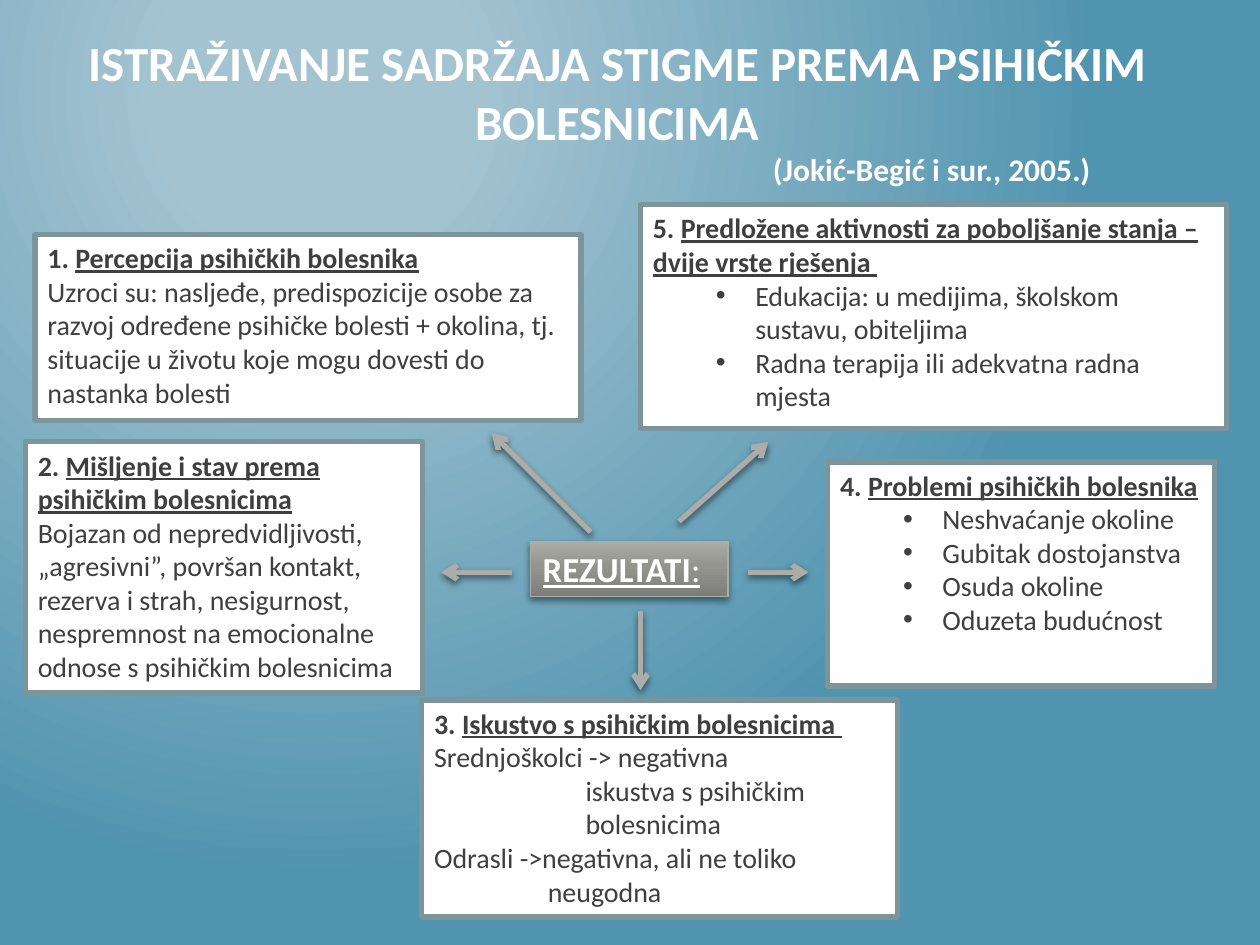
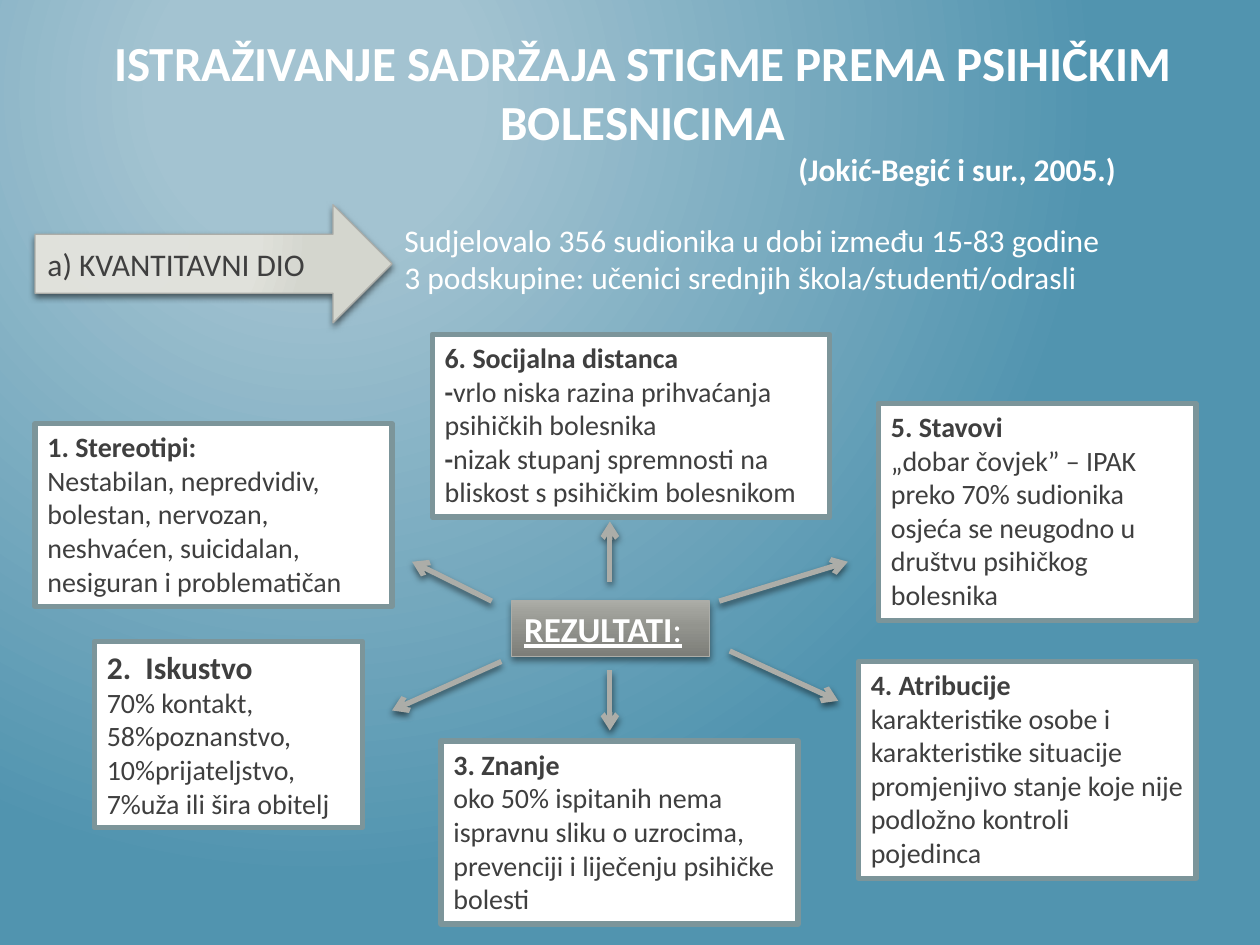
from dataclasses import dataclass
from typing import NamedTuple

from pptx import Presentation
from pptx import oxml
from pptx.dml.color import RGBColor
from pptx.enum import shapes, text
from pptx.oxml import ns
from pptx.util import Pt


@dataclass(frozen=True)
class Theme:
    font: str = "Calibri"
    white: str = "FFFFFF"
    ink: str = "3F3F3F"
    frame: str = "7C959A"
    grey: str = "ACADA8"
    title_size: int = 28
    hub_size: int = 20
    lead_size: int = 18
    body_size: int = 16
    thick: float = 3
    thin: float = 0.75
    backdrop: tuple = ((20, "A3C3D1"), (100, "5194AF"))
    hub_fill: tuple = ((0, "7D7E79"), (55, "93948E"), (100, "ABACA6"))
    banner_fill: tuple = ((0, "E0E1DC"), (35, "E0E1DC"), (69, "E0E1DB"), (100, "D4D6CE"))


THEME = Theme()


class Area(NamedTuple):
    left: float
    top: float
    width: float
    height: float


class Run(NamedTuple):
    text: str
    bold: bool = False
    underline: bool = False
    size: float | None = None


class Para(NamedTuple):
    runs: tuple[Run, ...]
    margin: float = 0
    indent: float = 0
    bullet: str = ""
    align: text.PP_ALIGN = text.PP_ALIGN.LEFT


class Finding(NamedTuple):
    area: Area
    paras: tuple[Para, ...]


class Arrow(NamedTuple):
    x1: float
    y1: float
    x2: float
    y2: float


@dataclass(frozen=True)
class Page:
    title_left: float
    hub: Area
    findings: tuple[Finding, ...]
    arrows: tuple[Arrow, ...]


def plain(words: str, margin: float = 0) -> Para:
    return Para((Run(words),), margin)


def heading(words: str, size: float | None = None) -> Para:
    return Para((Run(words, True, size=size),))


def numbered(number: int, words: str) -> Para:
    """Bold heading whose words, but not its number, are underlined."""
    return Para((Run(f"{number}. ", True), Run(words, True, True)))


def bullet(words: str) -> Para:
    return Para((Run(words),), 58.5, -22.5, "•")


def dashed(words: str) -> Para:
    return Para((Run("-", True), Run(words)))


def xml(markup: str):
    head, rest = markup.split(" ", 1) if " " in markup.split(">")[0] else markup.split(">", 1)
    joint = " " if " " in markup.split(">")[0] else ">"
    return oxml.parse_xml(f"{head} {ns.nsdecls('a')}{joint}{rest}")


def write_text(frame, paras, *, size: float, color: str,
               anchor=text.MSO_ANCHOR.TOP) -> None:
    frame.word_wrap = True
    frame.auto_size = text.MSO_AUTO_SIZE.NONE
    frame.vertical_anchor = anchor
    for index, para in enumerate(paras):
        line = frame.add_paragraph() if index else frame.paragraphs[0]
        line.alignment = para.align
        props = line._p.get_or_add_pPr()
        props.set("marL", str(Pt(para.margin)))
        props.set("indent", str(Pt(para.indent)))
        if para.bullet:
            props.append(xml('<a:buFont typeface="Arial"/>'))
            props.append(xml(f'<a:buChar char="{para.bullet}"/>'))
        for part in para.runs:
            run = line.add_run()
            run.text = part.text
            run.font.name = THEME.font
            run.font.size = Pt(part.size or size)
            run.font.bold = part.bold
            run.font.underline = part.underline
            run.font.color.rgb = RGBColor.from_string(color)


def set_gradient(fill, element, stops, direction: str) -> None:
    """Replace the first solid fill under element by a gradient of several stops."""
    fill.solid()
    solid = element.find(".//" + ns.qn("a:solidFill"))
    marks = "".join(f'<a:gs pos="{at * 1000}"><a:srgbClr val="{color}"/></a:gs>'
                    for at, color in stops)
    gradient = xml(f'<a:gradFill rotWithShape="1"><a:gsLst>{marks}</a:gsLst>{direction}</a:gradFill>')
    solid.getparent().replace(solid, gradient)


def radial(left: int, top: int) -> str:
    return (f'<a:path path="circle"><a:fillToRect l="{left * 1000}" t="{top * 1000}" '
            'r="100000" b="100000"/></a:path>')


def set_shadow(element, opacity: int) -> None:
    props = element.spPr
    for old in props.findall(ns.qn("a:effectLst")):
        props.remove(old)
    props.append(xml(
        f'<a:effectLst><a:outerShdw blurRad="{Pt(4)}" dist="{Pt(2)}" dir="5400000" '
        'rotWithShape="0"><a:srgbClr val="000000">'
        f'<a:alpha val="{opacity * 1000}"/></a:srgbClr></a:outerShdw></a:effectLst>'))


def set_line(line, color: str, width: float) -> None:
    line.color.rgb = RGBColor.from_string(color)
    line.width = Pt(width)


def add_block(slide, kind, area: Area, line_color: str, line_width: float):
    block = slide.shapes.add_shape(kind, *map(Pt, area))
    block.shadow.inherit = False
    set_line(block.line, line_color, line_width)
    return block


def add_finding(slide, finding: Finding) -> None:
    card = add_block(slide, shapes.MSO_SHAPE.RECTANGLE, finding.area, THEME.frame, THEME.thick)
    card.fill.solid()
    card.fill.fore_color.rgb = RGBColor.from_string(THEME.white)
    write_text(card.text_frame, finding.paras, size=THEME.body_size, color=THEME.ink)


def add_hub(slide, area: Area) -> None:
    hub = add_block(slide, shapes.MSO_SHAPE.RECTANGLE, area, THEME.grey, THEME.thin)
    set_gradient(hub.fill, hub.element.spPr, THEME.hub_fill, '<a:lin ang="16200000" scaled="0"/>')
    set_shadow(hub.element, 44)
    label = Para((Run("REZULTATI", True, True), Run(":", False, True)))
    write_text(hub.text_frame, (label,), size=THEME.hub_size, color=THEME.white)


def add_arrow(slide, arrow: Arrow) -> None:
    ray = slide.shapes.add_connector(shapes.MSO_CONNECTOR.STRAIGHT, *map(Pt, arrow))
    set_line(ray.line, THEME.grey, THEME.thick)
    ray.line._get_or_add_ln().append(xml('<a:tailEnd type="arrow"/>'))
    set_shadow(ray.element, 55)


def add_title(slide, left: float) -> None:
    title = slide.shapes.title
    title.left, title.top, title.width, title.height = map(Pt, (left, 15, 705.5, 97))
    paras = (
        Para((Run("ISTRAŽIVANJE SADRŽAJA STIGME PREMA PSIHIČKIM BOLESNICIMA", True),),
             align=text.PP_ALIGN.CENTER),
        Para((Run("(Jokić-Begić i sur., 2005.)", True, size=THEME.lead_size),), margin=434.5),
    )
    write_text(title.text_frame, paras, size=THEME.title_size, color=THEME.white)


def add_study_part(slide) -> None:
    """Arrow naming the part of the study, with its sample beside it."""
    banner = add_block(slide, shapes.MSO_SHAPE.RIGHT_ARROW, Area(20, 117, 204, 67.5),
                       THEME.grey, THEME.thin)
    set_gradient(banner.fill, banner.element.spPr, THEME.banner_fill, radial(50, 50))
    set_shadow(banner.element, 55)
    write_text(banner.text_frame, (plain("a) KVANTITAVNI DIO"),), size=THEME.lead_size,
               color=THEME.ink, anchor=text.MSO_ANCHOR.MIDDLE)
    sample = slide.shapes.add_textbox(*map(Pt, Area(224, 122.5, 436, 51)))
    write_text(sample.text_frame, (
        plain("Sudjelovalo 356 sudionika u dobi između 15-83 godine"),
        plain("3 podskupine: učenici srednjih škola/studenti/odrasli"),
    ), size=THEME.lead_size, color=THEME.white)


def add_page(deck, page: Page):
    slide = deck.slides.add_slide(deck.slide_layouts[5])
    set_gradient(slide.background.fill, slide.element, THEME.backdrop, radial(50, 20))
    add_title(slide, page.title_left)
    for finding in page.findings:
        add_finding(slide, finding)
    add_hub(slide, page.hub)
    for arrow in page.arrows:
        add_arrow(slide, arrow)
    return slide


QUALITATIVE = Page(
    title_left=0,
    hub=Area(303, 309.5, 113, 31.5),
    findings=(
        Finding(Area(366, 117, 335, 128), (
            numbered(5, "Predložene aktivnosti za poboljšanje stanja – dvije vrste rješenja "),
            bullet("Edukacija: u medijima, školskom sustavu, obiteljima"),
            bullet("Radna terapija ili adekvatna radna mjesta"))),
        Finding(Area(20, 134, 312, 106.5), (
            numbered(1, "Percepcija psihičkih bolesnika"),
            plain("Uzroci su: nasljeđe, predispozicije osobe za razvoj određene psihičke bolesti "
                  "+ okolina, tj. situacije u životu koje mogu dovesti do nastanka bolesti"))),
        Finding(Area(14.5, 252.5, 227, 143.5), (
            numbered(2, "Mišljenje i stav prema psihičkim bolesnicima"),
            plain("Bojazan od nepredvidljivosti, „agresivni”, površan kontakt, rezerva i strah, "
                  "nesigurnost, nespremnost na emocionalne odnose s psihičkim bolesnicima"))),
        Finding(Area(241, 400, 272, 124), (
            numbered(3, "Iskustvo s psihičkim bolesnicima "),
            plain("Srednjoškolci -> negativna"),
            plain("iskustva s psihičkim", 86.5),
            plain("bolesnicima", 86.5),
            plain("Odrasli ->negativna, ali ne toliko"),
            plain("neugodna", 65))),
        Finding(Area(473, 264, 221, 128), (
            numbered(4, "Problemi psihičkih bolesnika "),
            *map(bullet, ("Neshvaćanje okoline", "Gubitak dostojanstva",
                          "Osuda okoline", "Oduzeta budućnost")))),
    ),
    arrows=(
        Arrow(366, 349, 366, 394.5),
        Arrow(292.5, 327, 252, 327),
        Arrow(337.5, 304, 281, 247.5),
        Arrow(388, 298, 439, 252.5),
        Arrow(427.5, 327, 462, 327),
    ),
)

QUANTITATIVE = Page(
    title_left=14.5,
    hub=Area(292.5, 343.5, 113, 31.5),
    findings=(
        Finding(Area(247, 191, 227, 104.5), (
            heading("6. Socijalna distanca"),
            dashed("vrlo niska razina prihvaćanja psihičkih bolesnika"),
            dashed("nizak stupanj spremnosti na bliskost s psihičkim bolesnikom"))),
        Finding(Area(20, 242, 204, 104.5), (
            heading("1. Stereotipi:"),
            plain("Nestabilan, nepredvidiv, bolestan, nervozan, neshvaćen, suicidalan, "
                  "nesiguran i problematičan"))),
        Finding(Area(54, 366.5, 153, 106.5), (
            heading("2.  Iskustvo", THEME.lead_size),
            plain("70% kontakt, 58%poznanstvo, 10%prijateljstvo, 7%uža ili šira obitelj"))),
        Finding(Area(252, 423.5, 204, 104.5), (
            heading("3. Znanje"),
            plain("oko 50% ispitanih nema ispravnu sliku o uzrocima, prevenciji i liječenju "
                  "psihičke bolesti"))),
        Finding(Area(490.5, 378, 193, 124), (
            heading("4. Atribucije"),
            plain("karakteristike osobe i karakteristike situacije"),
            plain("promjenjivo stanje koje nije podložno kontroli pojedinca"))),
        Finding(Area(502, 230.5, 181.5, 124), (
            heading("5. Stavovi"),
            plain("„dobar čovjek” – IPAK preko 70% sudionika osjeća se neugodno u društvu "
                  "psihičkog bolesnika"))),
    ),
    arrows=(
        Arrow(348.5, 332.5, 348.5, 298),
        Arrow(281, 343.5, 235.5, 321),
        Arrow(286.5, 378, 224, 406),
        Arrow(411, 343.5, 484.5, 321),
        Arrow(417, 372, 479, 400.5),
        Arrow(348.5, 383, 348.5, 417.5),
    ),
)


def main() -> None:
    deck = Presentation()
    deck.slide_width, deck.slide_height = Pt(720), Pt(540)
    add_page(deck, QUALITATIVE)
    add_study_part(add_page(deck, QUANTITATIVE))
    deck.save("out.pptx")


if __name__ == "__main__":
    main()
